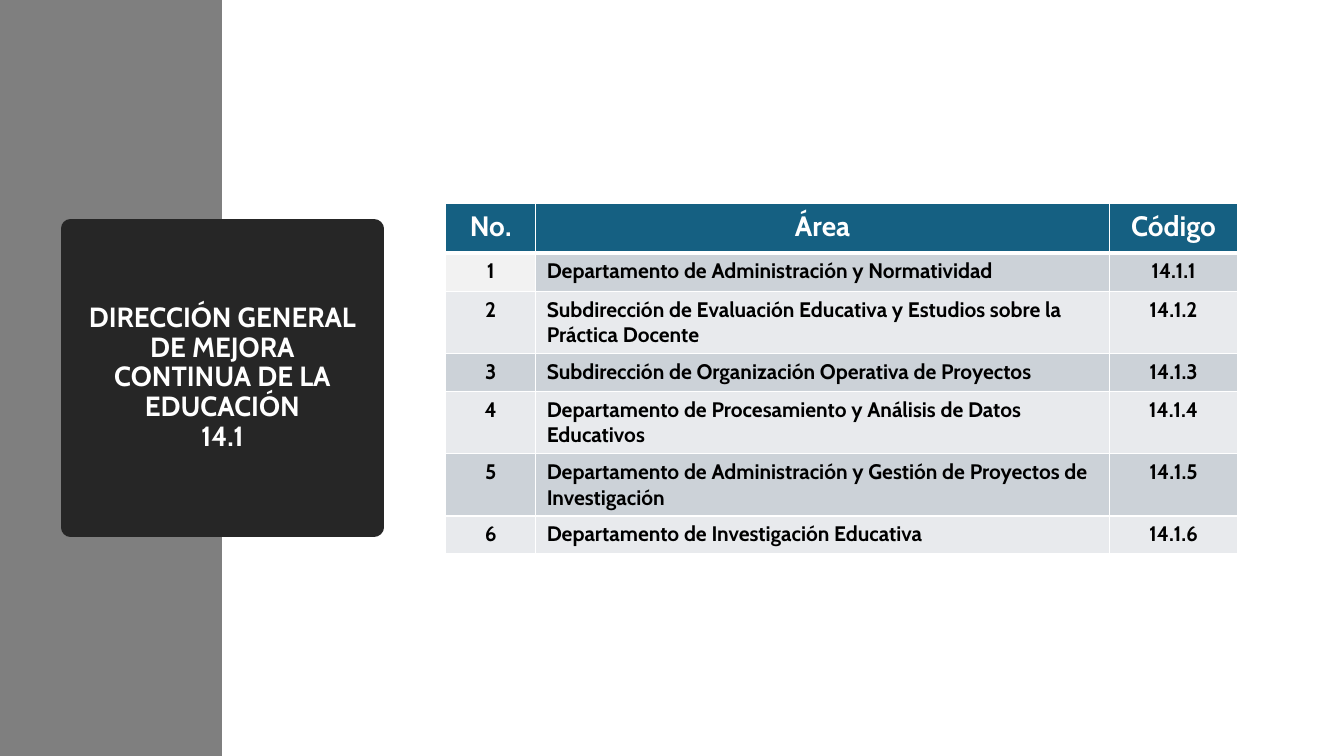
from lxml.etree import SubElement
from pptx import Presentation
from pptx.dml.color import RGBColor
from pptx.enum.shapes import MSO_SHAPE
from pptx.enum.text import MSO_ANCHOR, PP_ALIGN
from pptx.oxml.ns import qn
from pptx.util import Pt

COLORS = {
    "band": "7F7F7F", "panel": "262626", "header": "156082",
    "odd": "CCD2D8", "even": "E8EAED", "first": "F2F2F2",
    "white": "FFFFFF", "black": "000000",
}
FONT = "Cabin"
COLUMN_WIDTHS = (64.2, 410, 91.4)
HEADER_HEIGHT, LINE_HEIGHT, TWO_LINE_HEIGHT = 35.2, 27.2, 44.4
UNIT_CODE = "14.1"
AREAS = [
    ("Departamento de Administración y Normatividad", LINE_HEIGHT),
    ("Subdirección de Evaluación Educativa y Estudios sobre la Práctica Docente", TWO_LINE_HEIGHT),
    ("Subdirección de Organización Operativa de Proyectos", LINE_HEIGHT),
    ("Departamento de Procesamiento y Análisis de Datos Educativos", TWO_LINE_HEIGHT),
    ("Departamento de Administración y Gestión de Proyectos de Investigación", TWO_LINE_HEIGHT),
    ("Departamento de Investigación Educativa", LINE_HEIGHT),
]


def rgb(name):
    return RGBColor.from_string(COLORS[name])


def write(frame, text, size, color="white", align=PP_ALIGN.CENTER, spacing=None):
    """Fill a text frame with one bold paragraph; a newline is a line break."""
    frame.word_wrap = True
    para = frame.paragraphs[0]
    para.alignment = align
    para.line_spacing = spacing
    for index, line in enumerate(text.split("\n")):
        if index:
            para.add_line_break()
        span = para.add_run()
        span.text = line
        span.font.name = FONT
        span.font.size = Pt(size)
        span.font.bold = True
        span.font.color.rgb = rgb(color)


class SlideBuilder:
    def __init__(self, slide):
        self.slide = slide

    def rectangle(self, left, top, width, height, fill, line_width=0):
        box = self.slide.shapes.add_shape(
            MSO_SHAPE.RECTANGLE, Pt(left), Pt(top), Pt(width), Pt(height))
        box.shadow.inherit = False
        box.fill.solid()
        box.fill.fore_color.rgb = rgb(fill)
        if line_width:
            box.line.color.rgb = rgb(fill)
            box.line.width = Pt(line_width)
            SubElement(box.line._get_or_add_ln(), qn("a:round"))
        else:
            box.line.fill.background()
        return box

    def table(self, left, top, widths, heights):
        table = self.slide.shapes.add_table(
            len(heights), len(widths), Pt(left), Pt(top),
            Pt(sum(widths)), Pt(sum(heights))).table
        for column, width in zip(table.columns, widths):
            column.width = Pt(width)
        for row, height in zip(table.rows, heights):
            row.height = Pt(height)
        return table

    def cell(self, cell, text, fill, size, top_line=1, bottom_line=1, **style):
        cell.margin_left = cell.margin_right = Pt(8)
        cell.margin_top = cell.margin_bottom = Pt(4)
        self.borders(cell, L=1, R=1, T=top_line, B=bottom_line)
        cell.fill.solid()
        cell.fill.fore_color.rgb = rgb(fill)
        write(cell.text_frame, text, size, **style)

    def borders(self, cell, **widths):
        properties = cell._tc.get_or_add_tcPr()
        for side, width in widths.items():
            line = SubElement(properties, qn(f"a:ln{side}"), w=str(Pt(width)))
            fill = SubElement(line, qn("a:solidFill"))
            SubElement(fill, qn("a:srgbClr"), val=COLORS["white"])


def main():
    deck = Presentation()
    deck.slide_width, deck.slide_height = Pt(960), Pt(540)
    page = SlideBuilder(deck.slides.add_slide(deck.slide_layouts[6]))

    page.rectangle(0, 0, 158.5, 540, "band")
    title = page.rectangle(50.4, 163.4, 216.8, 213.2, "panel", line_width=13.75)
    title.text_frame.vertical_anchor = MSO_ANCHOR.MIDDLE
    write(title.text_frame,
          f"DIRECCIÓN GENERAL DE MEJORA CONTINUA DE LA EDUCACIÓN\n{UNIT_CODE}",
          19.8, spacing=0.9)

    heights = [HEADER_HEIGHT] + [height for _, height in AREAS]
    table = page.table(318.4, 145.6, COLUMN_WIDTHS, heights)
    for column, heading in enumerate(("No.", "Área", "Código")):
        page.cell(table.cell(0, column), heading, "header", 20, bottom_line=3)
    for number, (area, _) in enumerate(AREAS, start=1):
        band = "odd" if number % 2 else "even"
        for column, text in enumerate((str(number), area, f"{UNIT_CODE}.{number}")):
            page.cell(table.cell(number, column), text,
                      "first" if (number, column) == (1, 0) else band, 15,
                      top_line=3 if number == 1 else 1, color="black",
                      align=PP_ALIGN.LEFT if column == 1 else PP_ALIGN.CENTER)

    deck.save("out.pptx")


if __name__ == "__main__":
    main()
